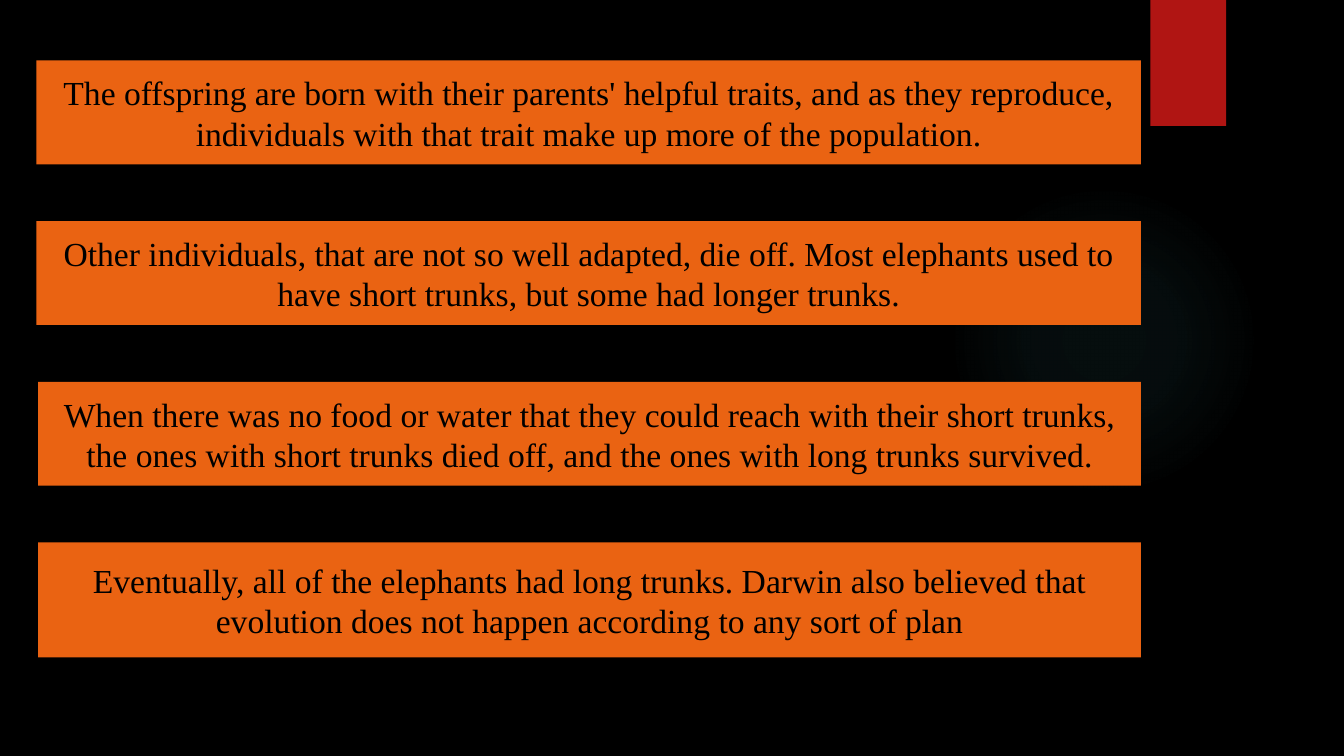
import pptx
import pptx.dml.color
import pptx.enum.shapes
import pptx.enum.text
import pptx.oxml
import pptx.oxml.ns
import pptx.util

Pt = pptx.util.Pt
SHAPE = pptx.enum.shapes.MSO_SHAPE
GLOW_STOPS = [(0, 7), (36, 6), (69, 0)]
STATEMENTS = [
    "The offspring are born with their parents' helpful traits, and as they reproduce, "
    "individuals with that trait make up more of the population.",
    "Other individuals, that are not so well adapted, die off. Most elephants used to "
    "have short trunks, but some had longer trunks.",
    "When there was no food or water that they could reach with their short trunks, "
    "the ones with short trunks died off, and the ones with long trunks survived.",
    "Eventually, all of the elephants had long trunks. Darwin also believed that "
    "evolution does not happen according to any sort of plan",
]


def rgb(value):
    """Return the colour for a hex string."""
    return pptx.dml.color.RGBColor.from_string(value)


def add_block(s, kind, box, color):
    """Add a plain filled shape in a box of left, top, width, height."""
    sp = s.shapes.add_shape(kind, *(Pt(v) for v in box))
    sp.shadow.inherit = False
    sp.fill.solid()
    sp.fill.fore_color.rgb = rgb(color)
    sp.line.fill.background()
    return sp


def add_glow(s, box, color):
    """Add a faint round glow that fades out from its centre."""
    sp = add_block(s, SHAPE.OVAL, box, color)
    stops = "".join(
        f'<a:gs pos="{pos * 1000}"><a:srgbClr val="{color}">'
        f'<a:alpha val="{alpha * 1000}"/></a:srgbClr></a:gs>'
        for pos, alpha in GLOW_STOPS)
    grad = pptx.oxml.parse_xml(
        f'<a:gradFill {pptx.oxml.ns.nsdecls("a")}><a:gsLst>{stops}</a:gsLst>'
        '<a:path path="circle"><a:fillToRect l="50000" t="50000" r="50000" b="50000"/>'
        '</a:path></a:gradFill>')
    solid = sp._element.spPr.find(pptx.oxml.ns.qn("a:solidFill"))
    solid.getparent().replace(solid, grad)


def add_statement(s, box, text):
    """Add an orange bar with centred text."""
    tf = add_block(s, SHAPE.RECTANGLE, box, "EA6312").text_frame
    tf.word_wrap = True
    tf.vertical_anchor = pptx.enum.text.MSO_ANCHOR.MIDDLE
    p = tf.paragraphs[0]
    p.alignment = pptx.enum.text.PP_ALIGN.CENTER
    r = p.add_run()
    r.text = text
    r.font.name = "Times New Roman"
    r.font.size = Pt(24)
    r.font.color.rgb = rgb("000000")


def add_statements(s, box):
    """Stack the bars at an equal pitch, the last one slightly taller."""
    left, top, width, height = box
    last = len(STATEMENTS) - 1
    pitch = (height - 82) / last
    for i, text in enumerate(STATEMENTS):
        inset = 1.2 if i > 1 else 0
        bar_height = 82 if i == last else 74.2
        add_statement(s, (left + inset, top + i * pitch, width - inset, bar_height), text)


def main():
    """Build and save the slide."""
    prs = pptx.Presentation()
    prs.slide_width, prs.slide_height = Pt(960), Pt(540)
    s = prs.slides.add_slide(prs.slide_layouts[6])
    s.background.fill.solid()
    s.background.fill.fore_color.rgb = rgb("000000")
    add_glow(s, (677.5, 131.8, 221.8, 221.8), "50B9C1")
    add_block(s, SHAPE.RECTANGLE, (821.8, 0, 54, 90), "B01513")
    add_statements(s, (26, 43.2, 789, 426.3))
    prs.save("out.pptx")


if __name__ == "__main__":
    main()
